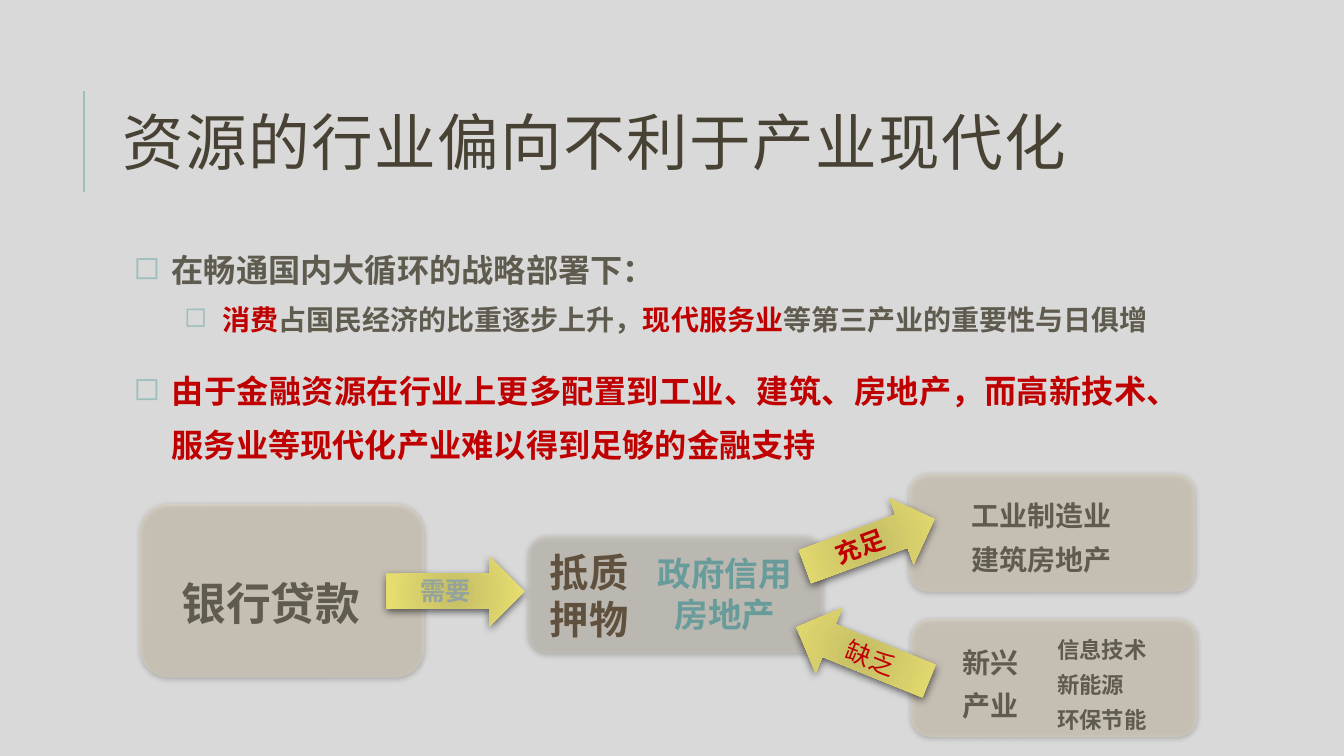
"""Build the slide on how lending favours some industries over others."""
from lxml import etree
from pptx import Presentation, util as u
from pptx.dml.color import RGBColor
from pptx.enum import shapes, text
from pptx.oxml.ns import qn

SANS, BODY, HEAD = "Noto Sans CJK SC", "Calibri", "Cabin"
GREY, RED, TEAL, SAND = "605B4F", "C00000", "9CBEBD", "E9D9BE"

TITLE = "资源的行业偏向不利于产业现代化"
POINTS = [
    ((3.12, 5.79, 28.3, 2.82), [
        (23, 0.96, 5, [("在畅通国内大循环的战略部署下：", GREY)]),
        (20, 2.23, 0, [("消费", RED), ("占国民经济的比重逐步上升，", GREY),
                       ("现代服务业", RED), ("等第三产业的重要性与日俱增", GREY)]),
    ]),
    ((3.12, 8.84, 26.06, 2.9), [
        (23, 0.96, 0, [("由于金融资源在行业上更多配置到工业、建筑、房地产，而高新技术、"
                        "服务业等现代化产业难以得到足够的金融支持", RED)]),
    ]),
]
CENTRED = {"align": text.PP_ALIGN.CENTER, "after": 6}
LOOSE = {"spacing": 1.3}
CARDS = [
    ((13.31, 13.49, 7.44, 2.97), "D0C6B8", [
        ((13.41, 13.69, 2.87, 1.45), ["抵质押物"], 28, "5F513E", CENTRED),
        ((15.82, 13.82, 4.9, 2.31), ["政府信用 房地产"], 24, "689C9A", CENTRED)]),
    ((3.53, 12.7, 7.16, 4.37), SAND, [
        ((4.32, 13.97, 7.39, 2.21), ["银行贷款"], 32, GREY, LOOSE)]),
    ((22.96, 15.6, 7.21, 2.97), SAND, [
        ((24, 15.88, 2.39, 2.41), ["新兴产业"], 20, GREY, LOOSE),
        ((26.39, 15.7, 5.31, 2.9), ["信息技术", "新能源", "环保节能"], 16, GREY, LOOSE)]),
    ((22.91, 11.94, 7.21, 2.97), SAND, [
        ((24.23, 12.19, 6.5, 2.31), ["工业制造业", "建筑房地产"], 20, GREY, LOOSE)]),
]
ARROWS = [
    ((20.85, 14.68, 1.78, 3.61), 112.1, "缺乏", (21.06, 16.08), 22.1, RED, False),
    ((21.03, 11.94, 1.78, 3.48), 249.8, "充足", (20.78, 13.26), 339.8, RED, True),
    ((10.59, 13.16, 1.78, 3.48), 270, "需要", (10.34, 14.38), 0, "95A39D", True),
]
LABEL_SIZE = (1.8, 1.02)


def colour(value):
    return RGBColor.from_string(value)


def child(parent, tag, **attributes):
    return etree.SubElement(parent, qn(tag), {k: str(v) for k, v in attributes.items()})


def set_font(para, name, size, bold, value=None):
    para.font.name, para.font.size, para.font.bold = name, u.Pt(size), bold
    if value:
        para.font.color.rgb = colour(value)


def add_box(page, place, wrap=True, grow=True):
    box = page.shapes.add_textbox(*map(u.Cm, place))
    box.text_frame.word_wrap = wrap
    if grow:
        box.text_frame.auto_size = text.MSO_AUTO_SIZE.SHAPE_TO_FIT_TEXT
    return box


def add_title(page):
    rule = page.shapes.add_connector(
        shapes.MSO_CONNECTOR.STRAIGHT, u.Cm(2.11), u.Cm(4.83), u.Cm(2.11), u.Cm(2.29))
    rule.line.color.rgb, rule.line.width = colour(TEAL), u.Pt(1.5)
    child(rule._element.spPr, "a:effectLst")
    frame = add_box(page, (2.84, 1.63, 27, 4.17), grow=False).text_frame
    frame.vertical_anchor = text.MSO_ANCHOR.MIDDLE
    para = frame.paragraphs[0]
    para.text, para.line_spacing = TITLE, 0.8
    set_font(para, HEAD, 44, False, "474233")
    para.font._element.set("spc", "100")


def add_points(page, place, points):
    frame = add_box(page, place).text_frame
    for index, (size, indent, before, spans) in enumerate(points):
        para = frame.paragraphs[0] if index == 0 else frame.add_paragraph()
        para.level = index
        properties = para._p.get_or_add_pPr()
        properties.set("marL", str(u.Cm(indent)))
        properties.set("indent", str(-u.Cm(0.96)))
        child(child(properties, "a:buClr"), "a:srgbClr", val=TEAL)
        child(properties, "a:buChar", char="◻")
        para.alignment, para.line_spacing = text.PP_ALIGN.JUSTIFY, 1.4
        para.space_before = u.Pt(before)
        set_font(para, BODY, size, True)
        for words, value in spans:
            span = para.add_run()
            span.text, span.font.color.rgb = words, colour(value)


def add_label(page, place, lines, size, value, align=None, after=0, spacing=1.0):
    frame = add_box(page, place).text_frame
    for index, words in enumerate(lines):
        para = frame.paragraphs[0] if index == 0 else frame.add_paragraph()
        para.text, para.alignment = words, align
        para.space_after, para.line_spacing = u.Pt(after), spacing
        set_font(para, SANS, size, True, value)


def add_shape(page, kind, place, opacity, blur, distance):
    shape = page.shapes.add_shape(kind, *map(u.Cm, place))
    shape.line.fill.background()
    shape.shadow.inherit = False
    effects = shape._element.spPr.find(qn("a:effectLst"))
    shadow = child(effects, "a:outerShdw", blurRad=u.Pt(blur), dist=u.Pt(distance),
                   dir=90 * 60000, rotWithShape=0)
    child(child(shadow, "a:srgbClr", val="000000"), "a:alpha", val=opacity * 1000)
    return shape


def add_card(page, place, value, labels):
    card = add_shape(page, shapes.MSO_SHAPE.ROUNDED_RECTANGLE, place, 50, 4, 1)
    card.fill.solid()
    card.fill.fore_color.rgb = colour(value)
    solid = card._element.spPr.find(qn("a:solidFill"))
    child(solid[0], "a:alpha", val=40000)
    for box, lines, size, ink, style in labels:
        add_label(page, box, lines, size, ink, **style)


def add_arrow(page, place, turn, words, corner, tilt, value, bold):
    arrow = add_shape(page, shapes.MSO_SHAPE.DOWN_ARROW, place, 60, 6, 2)
    arrow.rotation = turn
    arrow.fill.gradient()
    for stop, (position, shade) in zip(arrow.fill.gradient_stops,
                                       [(0, "C4BD65"), (1, "ECE271")]):
        stop.position, stop.color.rgb = position, colour(shade)
    gradient = arrow._element.spPr.find(qn("a:gradFill"))
    gradient.remove(gradient.find(qn("a:lin")))
    child(child(gradient, "a:path", path="circle"), "a:fillToRect",
          l=100000, t=100000, r=100000, b=100000)
    label = add_box(page, corner + LABEL_SIZE, wrap=False)
    label.rotation = tilt
    para = label.text_frame.paragraphs[0]
    para.text = words
    set_font(para, BODY, 18, bold, value)


def main():
    deck = Presentation()
    deck.slide_width, deck.slide_height = u.Cm(33.87), u.Cm(19.05)
    page = deck.slides.add_slide(deck.slide_layouts[6])
    page.background.fill.solid()
    page.background.fill.fore_color.rgb = colour("D9D9D9")
    add_title(page)
    for place, points in POINTS:
        add_points(page, place, points)
    for card in CARDS:
        add_card(page, *card)
    for arrow in ARROWS:
        add_arrow(page, *arrow)
    deck.save("out.pptx")


if __name__ == "__main__":
    main()
